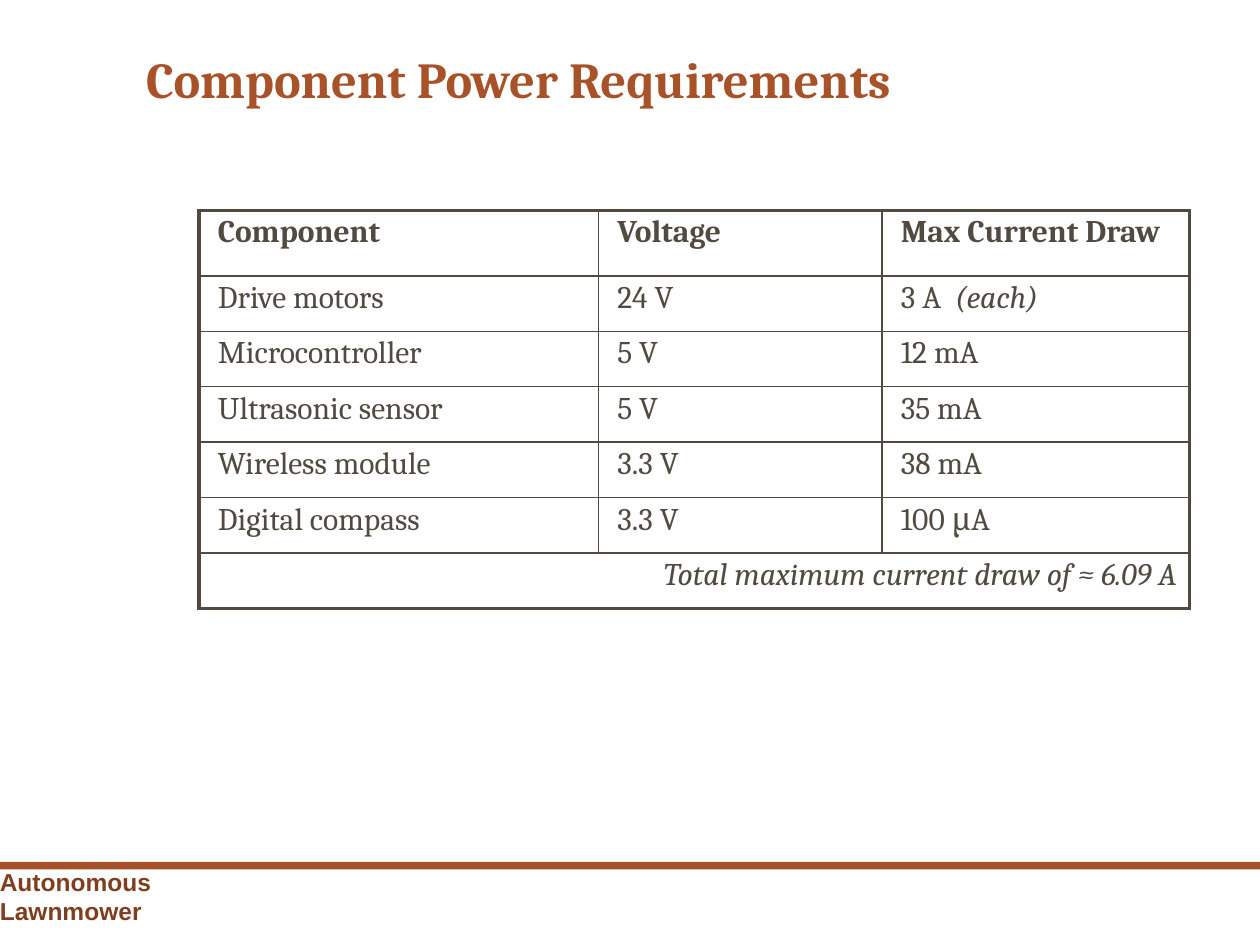
from lxml import etree
from pptx import Presentation
from pptx.dml.color import RGBColor
from pptx.enum import shapes, text
from pptx.oxml import ns
from pptx.util import Emu, Inches, Pt

HUES = {"rust": "A85229", "brown": "7F3F1F", "ink": "514A40"}
HEAD = ["Component", "Voltage", "Max Current Draw"]
PARTS = [
    ["Drive motors", "24 V", "3 A  |(each)"],  # the bar starts an italic run
    ["Microcontroller", "5 V", "12 mA"],
    ["Ultrasonic sensor", "5 V", "35 mA"],
    ["Wireless module", "3.3 V", "38 mA"],
    ["Digital compass", "3.3 V", "100 μA"],
]
TOTAL = "Total maximum current draw of ≈ 6.09 A"
THIN, THICK = Pt(1), Pt(2.25)


def hue(name):
    return RGBColor.from_string(HUES[name])


def style(font, size, color, face="Cambria", bold=False, italic=False):
    font.name, font.size = face, Pt(size)
    font.bold, font.italic = bold, italic
    font.color.rgb = hue(color)


def add_title(slide, left, top, width, height):
    title = slide.shapes.title
    title.left, title.top, title.width, title.height = left, top, width, height
    frame = title.text_frame
    frame.text = "Component Power Requirements"
    frame.word_wrap = True
    frame.auto_size = text.MSO_AUTO_SIZE.NONE
    frame.vertical_anchor = text.MSO_ANCHOR.BOTTOM
    para = frame.paragraphs[0]
    para.alignment = text.PP_ALIGN.LEFT
    para.line_spacing = 0.9
    style(para.runs[0].font, 28.8, "rust", bold=True)


def add_footer(slide, left, top, width, height):
    # Rule across the slide
    bar = slide.shapes.add_shape(
        shapes.MSO_SHAPE.RECTANGLE, left, top, width, height)
    bar.shadow.inherit = False
    bar.fill.solid()
    bar.fill.fore_color.rgb = hue("rust")
    bar.line.fill.background()
    # Project name below it
    label = slide.shapes.add_textbox(
        left - Inches(0.1), top - Inches(0.01), Inches(2.55), Inches(0.33))
    frame = label.text_frame
    frame.word_wrap = True
    frame.text = "Autonomous Lawnmower"
    style(frame.paragraphs[0].runs[0].font, 14, "brown", "Arial", bold=True)


def set_edges(cell, edges):
    props = cell._tc.get_or_add_tcPr()
    for side in "LRTB":
        line = etree.SubElement(props, ns.qn("a:ln" + side), w=str(edges[side]))
        fill = etree.SubElement(line, ns.qn("a:solidFill"))
        etree.SubElement(fill, ns.qn("a:srgbClr"), val=HUES["ink"])
    cell.fill.background()


def fill_cell(cell, words, bold=False, italic=False):
    para = cell.text_frame.paragraphs[0]
    para._p.get_or_add_pPr().set("marL", str(Inches(0.05)))
    para.line_spacing = 0.9
    for i, part in enumerate(words.split("|")):
        run = para.add_run()
        run.text = part
        style(run.font, 18, "ink", bold=bold, italic=italic or i > 0)
    return para


def add_power(slide, left, top, width, height):
    rows, cols = len(PARTS) + 2, len(HEAD)
    table = slide.shapes.add_table(rows, cols, left, top, width, height).table
    table.first_row = table.horz_banding = False
    for col, size in zip(table.columns, (3.17, 2.25, 2.44)):
        col.width = Inches(size)
    # The header takes the height left by the even rows
    step = Inches(0.44)
    for row in table.rows:
        row.height = step
    table.rows[0].height = Emu(height - step * (rows - 1))

    # Total across all columns
    last = table.cell(rows - 1, 0)
    last.merge(table.cell(rows - 1, cols - 1))
    fill_cell(last, TOTAL, italic=True).alignment = text.PP_ALIGN.RIGHT

    # Heavy frame, thin inner lines
    for r in range(rows):
        for c in range(cols):
            cell = table.cell(r, c)
            outer = {"L": c == 0, "T": r == 0, "B": r == rows - 1,
                     "R": c == cols - 1 or cell.is_merge_origin}
            set_edges(cell, {s: THICK if on else THIN for s, on in outer.items()})

    for r, line in enumerate([HEAD] + PARTS):
        for c, words in enumerate(line):
            fill_cell(table.cell(r, c), words, bold=r == 0)


def main():
    deck = Presentation()
    deck.slide_width, deck.slide_height = Inches(10), Inches(7.5)
    slide = deck.slides.add_slide(deck.slide_layouts[5])
    add_footer(slide, Inches(0), Inches(6.84), deck.slide_width, Inches(0.06))
    add_title(slide, Inches(1.06), Inches(0.42), Inches(8.27), Inches(0.5))
    add_power(slide, Inches(1.58), Inches(1.67), Inches(7.86), Inches(3.16))
    deck.save("out.pptx")


if __name__ == "__main__":
    main()
